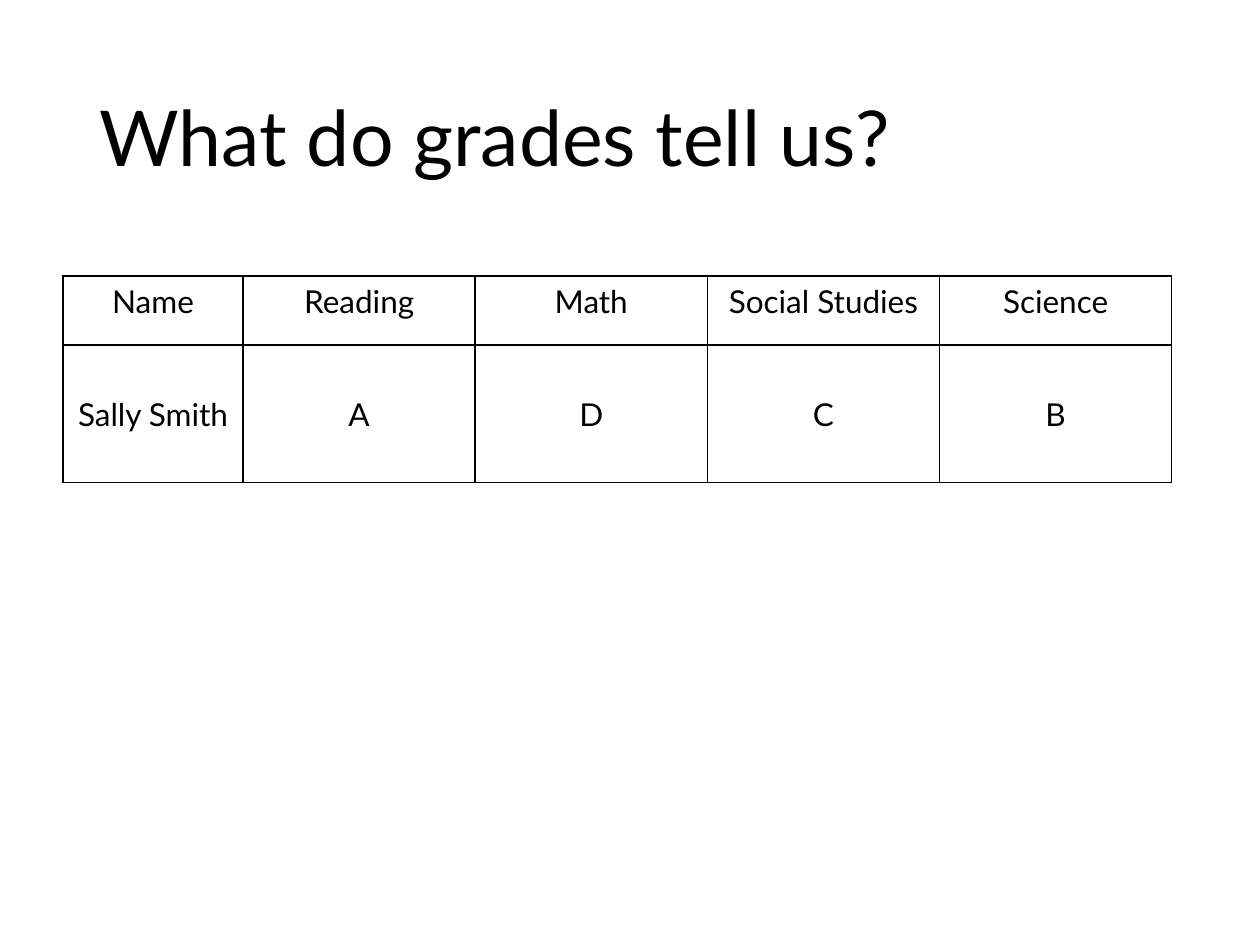
import dataclasses

import lxml.etree
import pptx
import pptx.dml.color
import pptx.enum.text
import pptx.oxml.ns
import pptx.util

Cm = pptx.util.Cm
ALIGN = pptx.enum.text.PP_ALIGN
ANCHOR = pptx.enum.text.MSO_ANCHOR


@dataclasses.dataclass(frozen=True)
class Theme:
    font: str = "Lato"
    ink: str = "000000"
    paper: str = "FFFFFF"
    title_size: int = 44
    table_size: int = 18
    border: float = 1


theme = Theme()


def write(frame, text, *, size, align, spacing=1.0):
    paragraph = frame.paragraphs[0]
    paragraph.alignment = align
    paragraph.line_spacing = spacing
    run = paragraph.add_run()
    run.text = text
    run.font.name = theme.font
    run.font.size = pptx.util.Pt(size)
    run.font.color.rgb = pptx.dml.color.RGBColor.from_string(theme.ink)


def add_borders(cell):
    properties = cell._tc.get_or_add_tcPr()
    for side in ("lnL", "lnR", "lnT", "lnB"):
        line = lxml.etree.SubElement(
            properties, pptx.oxml.ns.qn(f"a:{side}"), w=str(pptx.util.Pt(theme.border))
        )
        fill = lxml.etree.SubElement(line, pptx.oxml.ns.qn("a:solidFill"))
        lxml.etree.SubElement(fill, pptx.oxml.ns.qn("a:srgbClr"), val=theme.ink)


# Slide
deck = pptx.Presentation()
deck.slide_width, deck.slide_height = Cm(25.4), Cm(19.05)
slide = deck.slides.add_slide(deck.slide_layouts[5])
slide.background.fill.solid()
slide.background.fill.fore_color.rgb = pptx.dml.color.RGBColor.from_string(theme.paper)

# Title
title = slide.shapes.title
title.left, title.top = Cm(1.75), Cm(1.02)
title.width, title.height = Cm(21.89), Cm(3.68)
title.text_frame.word_wrap = True
title.text_frame.auto_size = pptx.enum.text.MSO_AUTO_SIZE.NONE
title.text_frame.vertical_anchor = ANCHOR.MIDDLE
write(title.text_frame, "What do grades tell us?",
      size=theme.title_size, align=ALIGN.LEFT, spacing=0.9)

# Grade table
grades = [
    ["Name", "Reading", "Math", "Social Studies", "Science"],
    ["Sally Smith", "A", "D", "C", "B"],
]
column_widths = [3.63] + [4.68] * 4
row_heights = [1.4, 2.77]
row_anchors = [ANCHOR.TOP, ANCHOR.MIDDLE]

report = slide.shapes.add_table(
    len(grades), len(column_widths), Cm(1.27), Cm(5.56),
    Cm(sum(column_widths)), Cm(sum(row_heights)),
).table
report.first_row = report.horz_banding = False
for column, width in zip(report.columns, column_widths):
    column.width = Cm(width)

for row, height, anchor, entries in zip(report.rows, row_heights, row_anchors, grades):
    row.height = Cm(height)
    for cell, entry in zip(row.cells, entries):
        add_borders(cell)
        cell.fill.background()
        cell.vertical_anchor = anchor
        write(cell.text_frame, entry, size=theme.table_size, align=ALIGN.CENTER)

deck.save("out.pptx")
